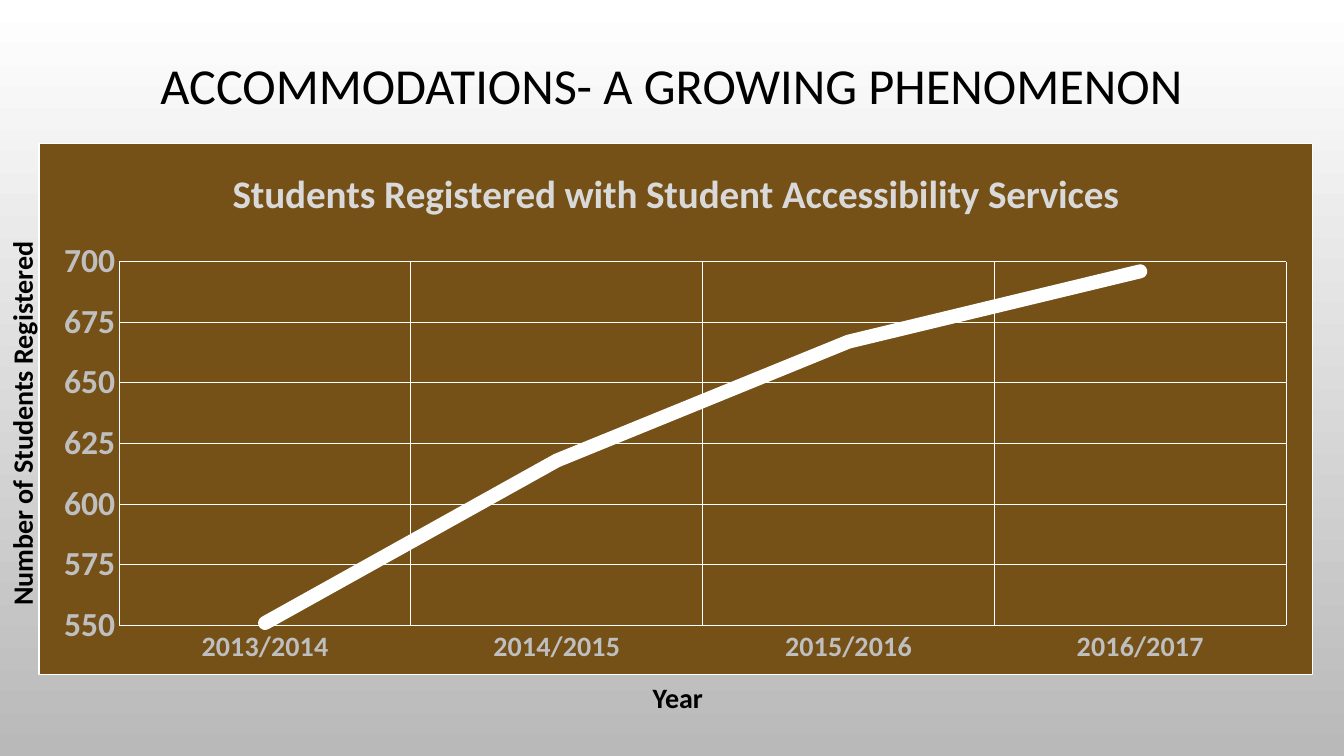
from lxml import etree
from pptx import Presentation
from pptx import util as u
from pptx.chart.data import CategoryChartData
from pptx.dml.color import RGBColor
from pptx.enum import chart as c, text as t
from pptx.oxml import parse_xml
from pptx.oxml.ns import nsdecls, qn

BLACK = RGBColor(0x00, 0x00, 0x00)
WHITE = RGBColor(0xFF, 0xFF, 0xFF)
GREY = RGBColor(0xB9, 0xB9, 0xB9)
LABEL_GREY = RGBColor(0xBF, 0xBF, 0xBF)
TITLE_GREY = RGBColor(0xD9, 0xD9, 0xD9)
BROWN = RGBColor(0x75, 0x50, 0x17)
FONT = "Calibri"
CHART_TITLE = "Students Registered with Student Accessibility Services"


def set_font(font, size, color, bold):
    values = {"name": FONT, "size": u.Pt(size), "bold": bold}
    for name, value in values.items():
        setattr(font, name, value)
    font.color.rgb = color


def add_label(words, box, size, bold, frame_values, paragraph_values):
    shape = slide.shapes.add_textbox(*map(u.Cm, box))
    frame = shape.text_frame
    paragraph = frame.paragraphs[0]
    paragraph.text = words
    for target, values in ((frame, frame_values), (paragraph, paragraph_values)):
        for name, value in values.items():
            setattr(target, name, value)
    set_font(paragraph.runs[0].font, size, BLACK, bold)
    return shape


presentation = Presentation()
presentation.slide_width = u.Cm(33.87)
presentation.slide_height = u.Cm(19.05)
slide = presentation.slides.add_slide(presentation.slide_layouts[6])

background = slide.background.fill
background.gradient()
background.gradient_angle = 270
for stop, position, color in zip(background.gradient_stops, (0, 1), (WHITE, GREY)):
    stop.position = position
    stop.color.rgb = color

value_label = add_label("Number of Students Registered", (0, 4.45, 1.37, 11.07),
                        20, True, {"word_wrap": True}, {})
value_label.text_frame._txBody.bodyPr.set("vert", "vert270")
add_label("Year", (16.2, 17.02, 11.07, 1.37), 20, True, {"word_wrap": True}, {})

data = CategoryChartData()
data.categories = ["2013/2014", "2014/2015", "2015/2016", "2016/2017"]
data.add_series(CHART_TITLE, [551, 618, 667, 696])
box = map(u.Cm, (0.97, 3.61, 32.13, 13.41))
chart = slide.shapes.add_chart(c.XL_CHART_TYPE.LINE, *box, data).chart
set_font(chart.font, 10, BLACK, False)
chart.has_legend = False
chart.has_title = True
title_paragraph = chart.chart_title.text_frame.paragraphs[0]
title_paragraph.text = CHART_TITLE
set_font(title_paragraph.runs[0].font, 28, TITLE_GREY, True)

for axis, size in ((chart.category_axis, 20), (chart.value_axis, 24)):
    axis_values = {"has_major_gridlines": True,
                   "major_tick_mark": c.XL_TICK_MARK.NONE,
                   "minor_tick_mark": c.XL_TICK_MARK.NONE}
    for name, value in axis_values.items():
        setattr(axis, name, value)
    axis.format.line.fill.background()
    grid = axis.major_gridlines.format.line
    grid.color.rgb = WHITE
    grid.width = u.Pt(0.75)
    set_font(axis.tick_labels.font, size, LABEL_GREY, True)
scale = {"minimum_scale": 550, "maximum_scale": 700, "major_unit": 25}
for name, value in scale.items():
    setattr(chart.value_axis, name, value)

plot = chart.plots[0]
plot.vary_by_categories = False
series = plot.series[0]
series.smooth = False
series.marker.style = c.XL_MARKER_STYLE.NONE
line = series.format.line
line.color.rgb = WHITE
line.width = u.Pt(10)
series_line = series._element.find(qn("c:spPr")).find(qn("a:ln"))
series_line.set("cap", "rnd")
etree.SubElement(series_line, qn("a:round"))

plot_area = chart._chartSpace.chart.plotArea
for old_layout in plot_area.findall(qn("c:layout")):
    plot_area.remove(old_layout)
layout = etree.Element(qn("c:layout"))
manual = etree.SubElement(layout, qn("c:manualLayout"))
for name, value in (("layoutTarget", "inner"), ("xMode", "edge"), ("yMode", "edge"),
                    ("x", 0.063), ("y", 0.222), ("w", 0.916), ("h", 0.685)):
    etree.SubElement(manual, qn(f"c:{name}")).set("val", str(value))
plot_area.insert(0, layout)

chart_space = chart._chartSpace
chart_space.chart.addnext(parse_xml(
    f'<c:spPr {nsdecls("c", "a")}>'
    f'<a:solidFill><a:srgbClr val="{BROWN}"/></a:solidFill>'
    f'<a:ln w="{u.Pt(0.75)}"><a:solidFill><a:srgbClr val="{WHITE}"/></a:solidFill></a:ln>'
    '</c:spPr>'))
if chart_space.find(qn("c:roundedCorners")) is None:
    corners = etree.Element(qn("c:roundedCorners"))
    corners.set("val", "0")
    chart_space.find(qn("c:date1904")).addnext(corners)

add_label("ACCOMMODATIONS- A GROWING PHENOMENON", (2.54, 0, 28.78, 4.45), 36, False,
          {"word_wrap": True, "vertical_anchor": t.MSO_ANCHOR.MIDDLE},
          {"alignment": t.PP_ALIGN.CENTER, "line_spacing": 0.9})

presentation.save("out.pptx")
